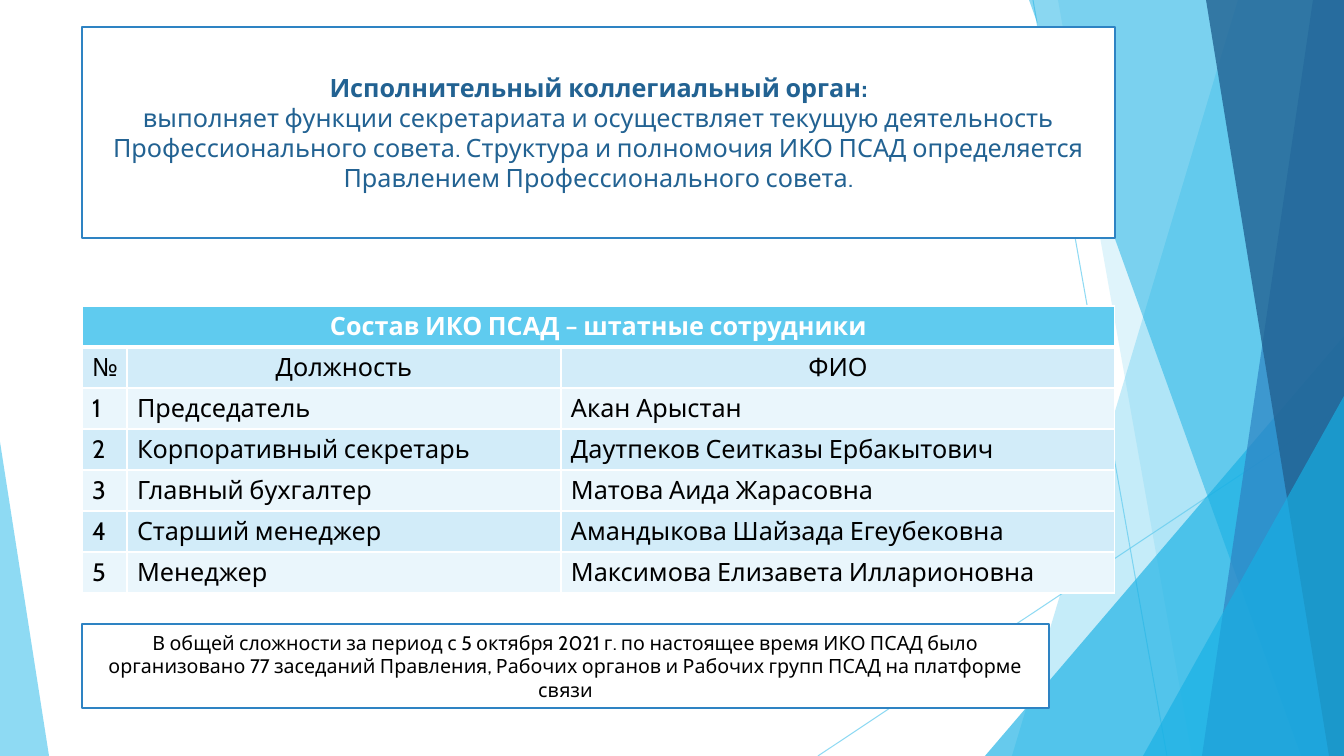
from dataclasses import dataclass

from lxml import etree
from pptx import Presentation
from pptx import util as u
from pptx.dml.color import RGBColor
from pptx.enum import shapes, text
from pptx.oxml.ns import qn

W, H = 1344, 756
SCALE = u.Inches(13.333) / W


@dataclass(frozen=True)
class Theme:
    font: str = "Cabin"
    body: int = 18
    note: int = 14
    sky: str = "5FCBEF"
    cyan: str = "17B0E4"
    blue: str = "2E83C3"
    navy: str = "226292"
    white: str = "FFFFFF"
    black: str = "000000"
    bands: tuple = ("EAF6FC", "D2ECF9")


T = Theme()


def px(*values):
    return [u.Emu(round(v * SCALE)) for v in values]


def rgb(color):
    return RGBColor.from_string(color)


def set_alpha(sp, percent):
    for clr in sp.element.spPr.iter(qn("a:srgbClr")):
        etree.SubElement(clr, qn("a:alpha"), val=str(percent * 1000))


def style(p, size, color, bold=False, align=text.PP_ALIGN.CENTER):
    p.alignment = align
    for r in p.runs:
        r.font.name, r.font.size, r.font.bold = T.font, u.Pt(size), bold
        r.font.color.rgb = rgb(color)


# Background decoration
def tint(sp, color, percent):
    sp.shadow.inherit = False
    sp.fill.solid()
    sp.fill.fore_color.rgb = rgb(color)
    sp.line.fill.background()
    set_alpha(sp, percent)


def add_ray(s, *ends):
    line = s.shapes.add_connector(shapes.MSO_CONNECTOR.STRAIGHT, *px(*ends))
    line.line.color.rgb = rgb(T.sky)
    line.line.width = u.Pt(0.75)
    set_alpha(line, 70)
    etree.SubElement(line.element.spPr, qn("a:effectLst"))


def add_facet(s, top, bottom, color, percent):
    """Band from a slanted left edge to the right side of the slide."""
    fb = s.shapes.build_freeform(top, 0, scale=SCALE)
    fb.add_line_segments([(W, 0), (W, H), (bottom, H)], close=True)
    tint(fb.convert_to_shape(), color, percent)


def add_corner(s, x, y, w, apex, color, percent):
    sp = s.shapes.add_shape(shapes.MSO_SHAPE.ISOSCELES_TRIANGLE, *px(x, y, w, H - y))
    sp.adjustments[0] = apex
    tint(sp, color, percent)


def add_background(s):
    add_ray(s, 1033, 0, 1167, H)
    add_ray(s, W, 406, 818, H)
    add_facet(s, 1238, 1012, T.sky, 36)
    add_facet(s, 1058, 1192, T.sky, 20)
    add_corner(s, 985, 336, W - 985, 1, T.cyan, 66)
    add_facet(s, 1029, 1301, T.cyan, 50)
    add_facet(s, 1313, 1202, T.blue, 70)
    add_facet(s, 1206, 1329, T.navy, 80)
    add_corner(s, 1143, 396, W - 1143, 1, T.cyan, 66)
    add_corner(s, 0, 442, 49, 0, T.sky, 70)


# Framed text
def add_frame(s, box, paragraphs, size, color):
    sp = s.shapes.add_shape(shapes.MSO_SHAPE.RECTANGLE, *px(*box))
    sp.shadow.inherit = False
    sp.fill.solid()
    sp.fill.fore_color.rgb = rgb(T.white)
    sp.line.color.rgb = rgb(T.blue)
    sp.line.width = u.Pt(1.5)
    tf = sp.text_frame
    tf.word_wrap = True
    tf.vertical_anchor = text.MSO_ANCHOR.MIDDLE
    tf.text = "\n".join(line for line, _ in paragraphs)
    for p, (_, bold) in zip(tf.paragraphs, paragraphs):
        style(p, size, color, bold)


# Staff table
def set_borders(cell, bottom):
    tc_pr = cell._tc.get_or_add_tcPr()
    for i, side in enumerate(("lnL", "lnR", "lnT", "lnB")):
        width = u.Pt(bottom if side == "lnB" else 1)
        ln = etree.Element(qn(f"a:{side}"), w=str(width))
        fill = etree.SubElement(ln, qn("a:solidFill"))
        etree.SubElement(fill, qn("a:srgbClr"), val=T.white)
        tc_pr.insert(i, ln)


def add_staff(s, box, widths, title, rows):
    rows = [(title, "", "")] + rows
    table = s.shapes.add_table(len(rows), len(widths), *px(*box)).table
    for col, width in zip(table.columns, px(*widths)):
        col.width = width
    for i, values in enumerate(rows):
        table.rows[i].height = px(box[3] / len(rows))[0]
        for j, value in enumerate(values):
            cell = table.cell(i, j)
            cell.text = value
            cell.fill.solid()
            cell.fill.fore_color.rgb = rgb(T.bands[i % 2] if i else T.sky)
            style(cell.text_frame.paragraphs[0], T.body,
                  T.black if i else T.white, bold=i == 0,
                  align=text.PP_ALIGN.CENTER if i < 2 else text.PP_ALIGN.LEFT)
            set_borders(cell, 1 if i else 3)
    table.cell(0, 0).merge(table.cell(0, len(widths) - 1))


def main():
    prs = Presentation()
    prs.slide_width, prs.slide_height = px(W, H)
    s = prs.slides.add_slide(prs.slide_layouts[6])
    add_background(s)
    add_frame(s, (82, 27, 1033, 211), [
        ("Исполнительный коллегиальный орган:", True),
        ("выполняет функции секретариата и осуществляет текущую деятельность "
         "Профессионального совета. Структура и полномочия ИКО ПСАД определяется "
         "Правлением Профессионального совета.", False),
    ], T.body, T.navy)
    add_staff(s, (82, 306, 1033, 287), (45, 434, 554),
              "Состав ИКО ПСАД – штатные сотрудники", [
        ("№", "Должность", "ФИО"),
        ("1", "Председатель", "Акан Арыстан"),
        ("2", "Корпоративный секретарь", "Даутпеков Сеитказы Ербакытович"),
        ("3", "Главный бухгалтер", "Матова Аида Жарасовна"),
        ("4", "Старший менеджер", "Амандыкова Шайзада Егеубековна"),
        ("5", "Менеджер", "Максимова Елизавета Илларионовна"),
    ])
    add_frame(s, (82, 624, 967, 84), [
        ("В общей сложности за период с 5 октября 2021 г. по настоящее время ИКО "
         "ПСАД было организовано 77 заседаний Правления, Рабочих органов и Рабочих "
         "групп ПСАД на платформе связи", False),
    ], T.note, T.black)
    prs.save("out.pptx")


if __name__ == "__main__":
    main()
